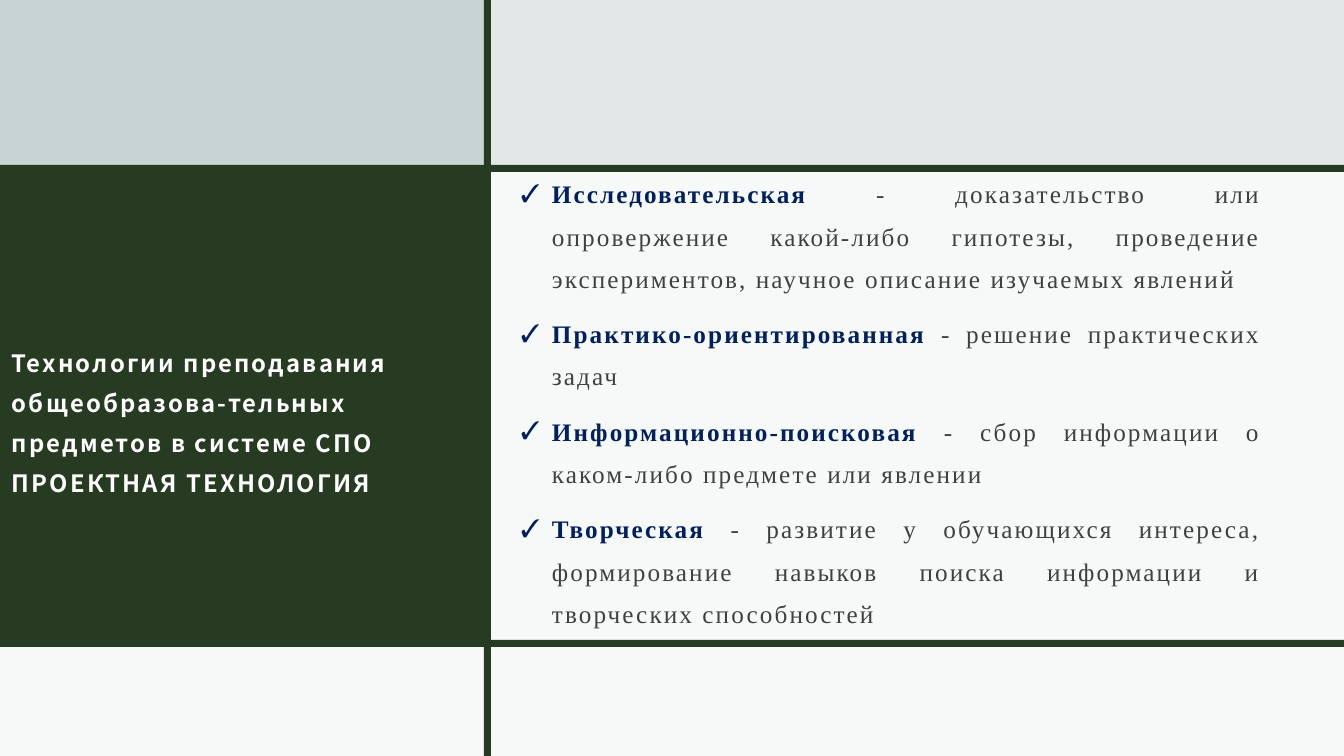
from lxml import etree
from pptx import Presentation, util as u
from pptx.dml.color import RGBColor
from pptx.enum import shapes, text
from pptx.oxml import ns

SCALE = 914400 / 100.8
WIDTH, HEIGHT = 1344, 756
BAR = 7
COLUMN, TOP, BOTTOM = 488, 167, 647

GREEN = RGBColor(0x26, 0x3B, 0x22)
MIST = RGBColor(0xE2, 0xE8, 0xE8)
SAGE = RGBColor(0xC8, 0xD4, 0xD4)
WHITE = RGBColor(0xFF, 0xFF, 0xFF)
NAVY = RGBColor(0x00, 0x20, 0x60)
GRAY = RGBColor(0x40, 0x40, 0x40)

TITLE = ("Технологии преподавания общеобразова-тельных предметов в системе СПО",
         "ПРОЕКТНАЯ ТЕХНОЛОГИЯ")
PROJECT_TYPES = [
    ("Исследовательская", "доказательство или опровержение какой-либо гипотезы, "
     "проведение экспериментов, научное описание изучаемых явлений"),
    ("Практико-ориентированная", "решение практических задач"),
    ("Информационно-поисковая", "сбор информации о каком-либо предмете или явлении"),
    ("Творческая", "развитие у обучающихся интереса, формирование навыков "
     "поиска информации и творческих способностей"),
]


def px(length):
    return u.Emu(round(length * SCALE))


def add_panel(page, box, color, opacity=100):
    panel = page.shapes.add_shape(shapes.MSO_SHAPE.RECTANGLE, *map(px, box))
    panel.shadow.inherit = False
    panel.line.fill.background()
    panel.fill.solid()
    panel.fill.fore_color.rgb = color
    if opacity < 100:
        tint = panel.fill._xPr.find(".//" + ns.qn("a:srgbClr"))
        etree.SubElement(tint, ns.qn("a:alpha"), val=str(opacity * 1000))


def add_span(para, words, font, size, color, bold=False):
    span = para.add_run()
    span.text = words
    span.font.name = font
    span.font.size = u.Pt(size)
    span.font.bold = bold
    span.font.color.rgb = color
    properties = span.font._element
    properties.set("spc", "150")
    latin = properties.find(ns.qn("a:latin"))
    for tag in ("a:cs", "a:ea"):
        latin.addnext(etree.Element(ns.qn(tag), typeface=font))


def place_frame(page, holder, box):
    holder.left, holder.top, holder.width, holder.height = map(px, box)
    page.shapes._spTree.append(holder._element)
    frame = holder.text_frame
    frame.word_wrap = True
    frame.auto_size = text.MSO_AUTO_SIZE.NONE
    frame.vertical_anchor = text.MSO_ANCHOR.MIDDLE
    frame.margin_left = frame.margin_right = frame.margin_top = px(12)
    frame.margin_bottom = px(10)
    return frame


def add_check(para, indent):
    properties = para._p.get_or_add_pPr()
    properties.set("marL", str(px(indent)))
    properties.set("indent", str(-px(indent)))
    etree.SubElement(properties, ns.qn("a:buFont"), typeface="Times New Roman")
    etree.SubElement(properties, ns.qn("a:buChar"), char="✓")


def draw_grid(page, box):
    left, top, width, height = box
    right = width - COLUMN
    add_panel(page, (left, top + TOP, COLUMN, BOTTOM - TOP), GREEN)
    add_panel(page, (left, top, COLUMN, TOP), SAGE)
    add_panel(page, (left + COLUMN, top + TOP, right, BOTTOM - TOP), WHITE, 75)
    add_panel(page, (left, top + BOTTOM, width, height - BOTTOM), WHITE, 75)
    for edge in (TOP - 2, BOTTOM - BAR):
        add_panel(page, (left, top + edge, width, BAR), GREEN)
    add_panel(page, (left + COLUMN - 4, top, BAR, height), GREEN)


def write_title(page, box):
    para = place_frame(page, page.shapes.title, box).paragraphs[0]
    para.alignment = text.PP_ALIGN.LEFT
    para.line_spacing = 1.4
    first, second = TITLE
    style = dict(font="Noto Sans CJK JP", size=17, color=WHITE, bold=True)
    add_span(para, first, **style)
    para.add_line_break()
    add_span(para, second, **style)


def write_project_types(page, box):
    frame = place_frame(page, page.placeholders[1], box)
    for index, (name, meaning) in enumerate(PROJECT_TYPES):
        para = frame.add_paragraph() if index else frame.paragraphs[0]
        para.alignment = text.PP_ALIGN.JUSTIFY
        para.line_spacing = 1.4
        para.space_before = u.Pt(9.3)
        add_check(para, 31)
        add_span(para, name, "Times New Roman", 18, NAVY, bold=True)
        add_span(para, " - " + meaning, "Times New Roman", 18, GRAY)


def main():
    deck = Presentation()
    deck.slide_width, deck.slide_height = px(WIDTH), px(HEIGHT)
    page = deck.slides.add_slide(deck.slide_layouts[1])
    page.background.fill.solid()
    page.background.fill.fore_color.rgb = MIST
    draw_grid(page, (0, 0, WIDTH, HEIGHT))
    write_title(page, (0, 216, 488, 401))
    write_project_types(page, (509, 178, 764, 437))
    deck.save("out.pptx")


if __name__ == "__main__":
    main()
